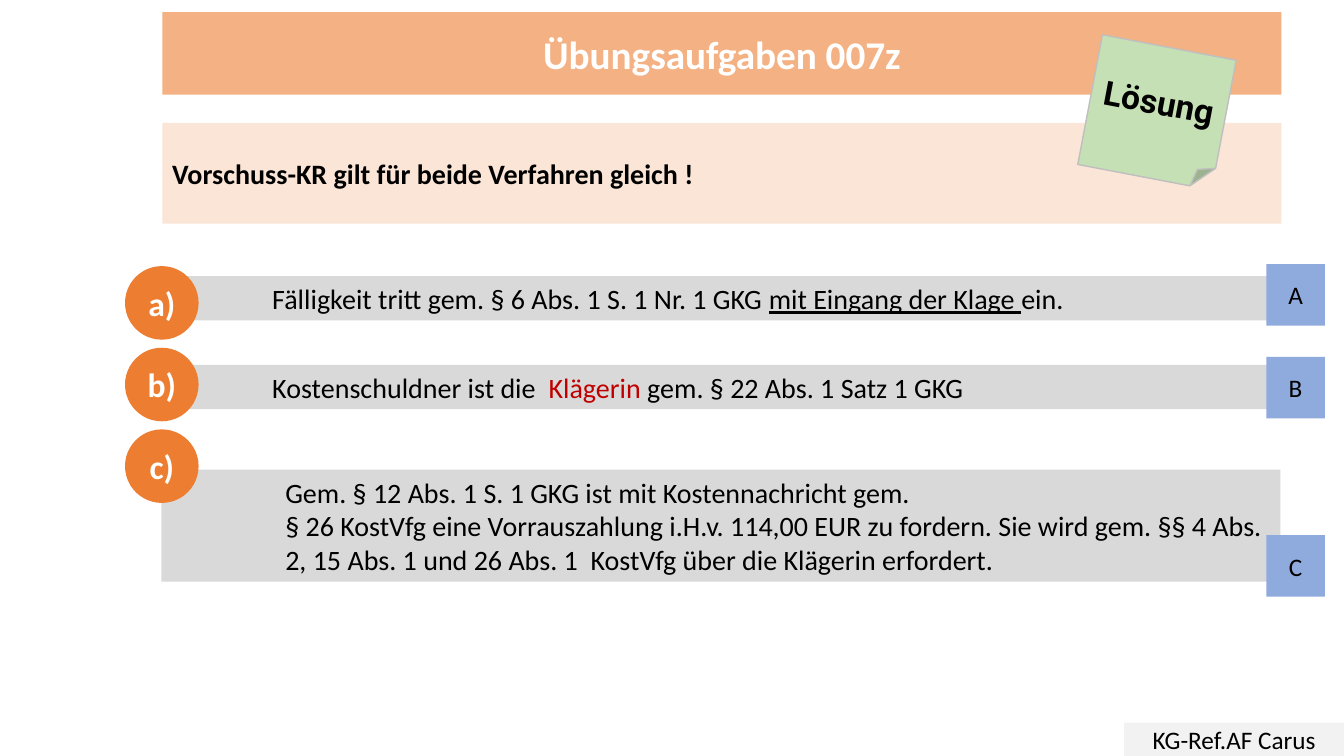
from lxml import etree
from pptx import Presentation
from pptx import util as u
from pptx.dml.color import RGBColor
from pptx.enum import shapes, text
from pptx.oxml import ns

COLOURS = {
    "band": "F4B183", "hint": "FBE5D6", "answer": "D9D9D9", "marker": "ED7D31",
    "tag": "8FAADC", "footer": "F2F2F2", "note": "C5E0B4", "note_edge": "BFBFBF",
    "black": "000000", "white": "FFFFFF", "red": "C00000",
}
SHAPE = shapes.MSO_SHAPE
LEFT, CENTRE = text.PP_ALIGN.LEFT, text.PP_ALIGN.CENTER
BAR_LEFT, BAR_WIDTH = 1.6, 11.1


class ExerciseSlide:
    def __init__(self, deck, font="Calibri"):
        self.slide = deck.slides.add_slide(deck.slide_layouts[5])
        self.font = font

    def colour(self, name):
        return RGBColor.from_string(COLOURS[name])

    def paint(self, shape, fill):
        shape.fill.solid()
        shape.fill.fore_color.rgb = self.colour(fill)
        shape.line.fill.background()

    def add_text(self, shape, paragraphs, size, colour="black", bold=False,
                 align=CENTRE, font=None, indent=0):
        """Each paragraph is a list of (wording, style) runs; a style may set colour or underline."""
        frame = shape.text_frame
        frame.word_wrap = True
        frame.auto_size = text.MSO_AUTO_SIZE.NONE
        frame.vertical_anchor = text.MSO_ANCHOR.MIDDLE
        frame.margin_left = u.Inches(0.1 + indent)
        for number, runs in enumerate(paragraphs):
            paragraph = frame.add_paragraph() if number else frame.paragraphs[0]
            paragraph.alignment = align
            for wording, style in runs:
                run = paragraph.add_run()
                run.text = wording
                run.font.name = font or self.font
                run.font.size = u.Pt(size)
                run.font.bold = bold
                run.font.underline = style.get("underline", False)
                run.font.color.rgb = self.colour(style.get("colour", colour))

    def title(self, wording, box):
        """Turn the title placeholder into a rounded band."""
        band = self.slide.shapes.title
        band.left, band.top, band.width, band.height = map(u.Inches, box)
        geometry = etree.Element(ns.qn("a:prstGeom"), prst="roundRect")
        etree.SubElement(geometry, ns.qn("a:avLst"))
        band.element.spPr.insert(1, geometry)
        self.paint(band, "band")
        self.add_text(band, [[(wording, {})]], 28, "white", bold=True)

    def block(self, kind, box, fill, paragraphs, size, **style):
        shape = self.slide.shapes.add_shape(kind, *map(u.Inches, box))
        shape.shadow.inherit = False
        self.paint(shape, fill)
        self.add_text(shape, paragraphs, size, **style)
        return shape

    def answer(self, top, height, paragraphs, indent):
        self.block(SHAPE.RECTANGLE, (BAR_LEFT, top, BAR_WIDTH, height), "answer",
                   paragraphs, 20, align=LEFT, indent=indent)

    def marker(self, label, top):
        self.block(SHAPE.FLOWCHART_CONNECTOR, (1.24, top, 0.73, 0.73), "marker",
                   [[(label, {})]], 24, colour="white", bold=True)

    def tag(self, letter, top):
        self.block(SHAPE.RECTANGLE, (12.56, top, 0.58, 0.61), "tag",
                   [[(letter, {})]], 18)

    def sticky_note(self, wording, box, angle):
        note = self.block(SHAPE.FOLDED_CORNER, box, "note", [[(wording, {})]], 24,
                          bold=True, font="Roboto")
        note.rotation = angle
        note.line.color.rgb = self.colour("note_edge")
        note.line.width = u.Pt(1)


# top, height, indent, top of the letter tag, paragraphs
ANSWERS = [
    (2.74, 0.44, 1, 2.62, [[
        ("Fälligkeit tritt gem. § 6 Abs. 1 S. 1 Nr. 1 GKG ", {}),
        ("mit Eingang der Klage ", {"underline": True}),
        ("ein.", {})]]),
    (3.62, 0.44, 1, 3.54, [[
        ("Kostenschuldner ist die  ", {}),
        ("Klägerin", {"colour": "red"}),
        (" gem. § 22 Abs. 1 Satz 1 GKG", {})]]),
    (4.66, 1.11, 1.13, 5.31, [
        [("Gem. § 12 Abs. 1 S. 1 GKG ist mit Kostennachricht gem.", {})],
        [("§ 26 KostVfg eine Vorrauszahlung i.H.v. 114,00 EUR zu fordern. "
          "Sie wird gem. §§ 4 Abs. 2, 15 Abs. 1 und 26 Abs. 1  KostVfg "
          "über die Klägerin erfordert.", {})]]),
]


def main():
    deck = Presentation()
    deck.slide_width, deck.slide_height = u.Inches(13.33), u.Inches(7.5)
    page = ExerciseSlide(deck)

    page.title("Übungsaufgaben 007z", (1.61, 0.12, BAR_WIDTH, 0.82))
    page.block(SHAPE.RECTANGLE, (1.61, 1.22, BAR_WIDTH, 1), "hint",
               [[("Vorschuss-KR gilt für beide Verfahren gleich !", {})]], 20,
               bold=True, align=LEFT)
    page.block(SHAPE.RECTANGLE, (11.15, 7.17, 2.18, 0.33), "footer",
               [[("KG-Ref.AF Carus", {})]], 18)
    page.sticky_note("Lösung", (10.8, 0.46, 1.35, 1.31), 10.8)

    for row, (top, height, indent, tag_top, paragraphs) in enumerate(ANSWERS):
        page.answer(top, height, paragraphs, indent)
        page.marker("abc"[row] + ")", 2.64 + row * 0.81)
        page.tag("ABC"[row], tag_top)

    deck.save("out.pptx")


if __name__ == "__main__":
    main()
